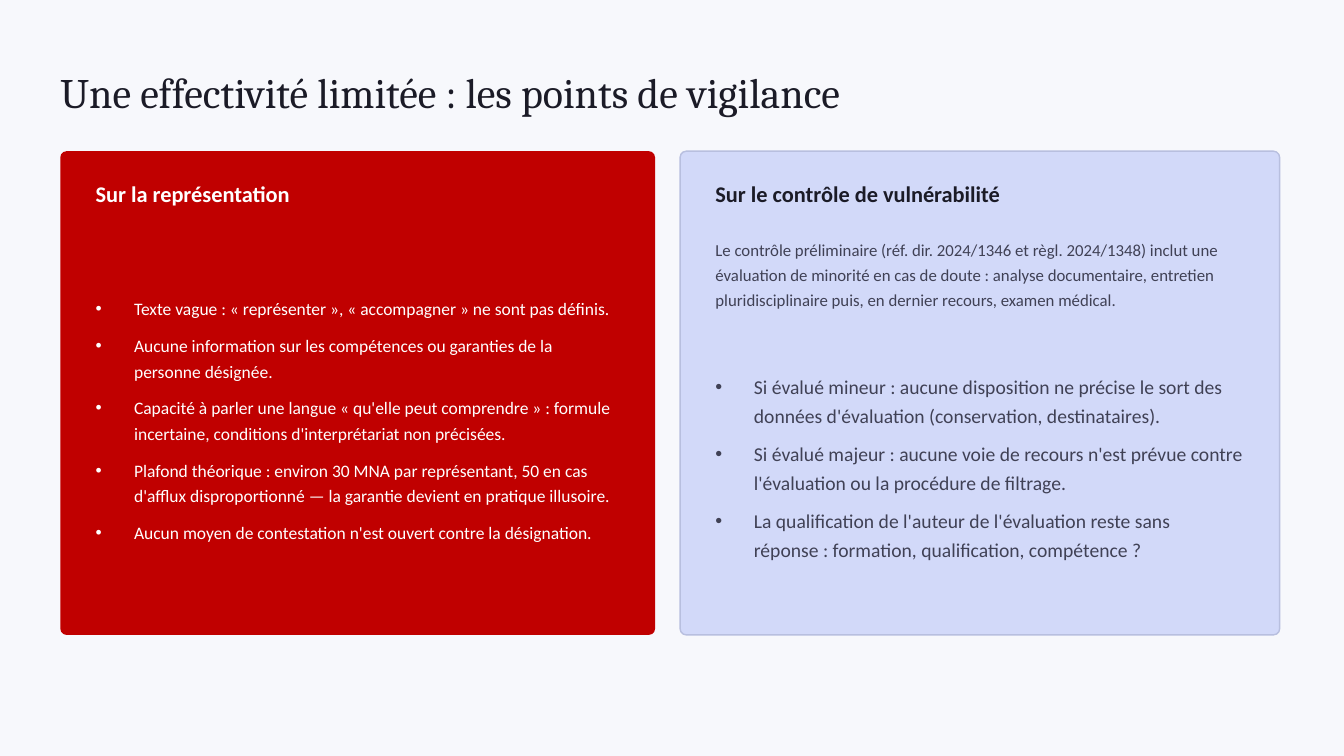
"""Build a slide comparing two cards of points requiring vigilance."""
from dataclasses import dataclass

from lxml.etree import SubElement
from pptx import Presentation
from pptx.dml.color import RGBColor
from pptx.enum.shapes import MSO_SHAPE
from pptx.enum.text import MSO_ANCHOR, PP_ALIGN
from pptx.oxml.ns import qn
from pptx.slide import Slide
from pptx.util import Cm, Pt

INK = "1B1B27"
SLATE = "404155"
WHITE = "FFFFFF"
CARD_TOP = 3.81
CARD_HEIGHT = 12.19
CARD_PADDING = 0.89
BULLET_INDENT = 0.97


@dataclass(frozen=True)
class TextStyle:
    size: float
    color: str
    font: str = "Calibri"
    bold: bool = False
    line_spacing: float = 1.0
    space_after: float = 0
    bulleted: bool = False


@dataclass(frozen=True)
class TextBlock:
    top: float
    height: float
    style: TextStyle
    paragraphs: tuple[str, ...]


@dataclass(frozen=True)
class Card:
    left: float
    width: float
    text_width: float
    fill: str
    border: str | None
    blocks: tuple[TextBlock, ...]


TITLE = TextBlock(
    1.14, 2.29, TextStyle(30, INK, font="Cambria", line_spacing=1.04),
    ("Une effectivité limitée : les points de vigilance",),
)

CARDS = (
    Card(1.52, 14.99, 13.21, "C00000", None, (
        TextBlock(4.32, 1.14, TextStyle(16, WHITE, bold=True), ("Sur la représentation",)),
        TextBlock(
            5.59, 9.91,
            TextStyle(12.5, WHITE, line_spacing=1.22, space_after=8, bulleted=True),
            (
                "Texte vague : « représenter », « accompagner » ne sont pas définis.",
                "Aucune information sur les compétences ou garanties de la personne désignée.",
                "Capacité à parler une langue « qu'elle peut comprendre » : formule incertaine, "
                "conditions d'interprétariat non précisées.",
                "Plafond théorique : environ 30 MNA par représentant, 50 en cas d'afflux "
                "disproportionné — la garantie devient en pratique illusoire.",
                "Aucun moyen de contestation n'est ouvert contre la désignation.",
            ),
        ),
    )),
    Card(17.14, 15.11, 13.46, "D2D9F9", "B8BFDF", (
        TextBlock(
            4.32, 1.14, TextStyle(16, INK, bold=True), ("Sur le contrôle de vulnérabilité",),
        ),
        TextBlock(
            5.46, 2.79, TextStyle(12, SLATE, line_spacing=1.25),
            (
                "Le contrôle préliminaire (réf. dir. 2024/1346 et règl. 2024/1348) inclut une "
                "évaluation de minorité en cas de doute : analyse documentaire, entretien "
                "pluridisciplinaire puis, en dernier recours, examen médical.",
            ),
        ),
        TextBlock(
            8.43, 6.6,
            TextStyle(14, SLATE, line_spacing=1.22, space_after=7, bulleted=True),
            (
                "Si évalué mineur : aucune disposition ne précise le sort des données "
                "d'évaluation (conservation, destinataires).",
                "Si évalué majeur : aucune voie de recours n'est prévue contre l'évaluation "
                "ou la procédure de filtrage.",
                "La qualification de l'auteur de l'évaluation reste sans réponse : formation, "
                "qualification, compétence ?",
            ),
        ),
    )),
)


def color(value: str) -> RGBColor:
    return RGBColor.from_string(value)


def add_bullet(paragraph) -> None:
    properties = paragraph._p.get_or_add_pPr()
    properties.set("marL", str(Cm(BULLET_INDENT)))
    properties.set("indent", str(-Cm(BULLET_INDENT)))
    SubElement(properties, qn("a:buFont")).set("typeface", "Arial")
    SubElement(properties, qn("a:buChar")).set("char", "•")


def add_text_block(slide: Slide, block: TextBlock, left: float, width: float) -> None:
    box = slide.shapes.add_textbox(Cm(left), Cm(block.top), Cm(width), Cm(block.height))
    frame = box.text_frame
    frame.word_wrap = True
    frame.vertical_anchor = MSO_ANCHOR.MIDDLE
    frame.margin_left = frame.margin_right = frame.margin_top = frame.margin_bottom = 0
    frame.text = "\n".join(block.paragraphs)
    style = block.style
    for paragraph in frame.paragraphs:
        if style.bulleted:
            add_bullet(paragraph)
        paragraph.alignment = PP_ALIGN.LEFT
        paragraph.line_spacing = style.line_spacing
        paragraph.space_after = Pt(style.space_after)
        for run in paragraph.runs:
            run.font.name = style.font
            run.font.size = Pt(style.size)
            run.font.bold = style.bold
            run.font.color.rgb = color(style.color)


def add_card(slide: Slide, card: Card) -> None:
    shape = slide.shapes.add_shape(
        MSO_SHAPE.ROUNDED_RECTANGLE,
        Cm(card.left), Cm(CARD_TOP), Cm(card.width), Cm(CARD_HEIGHT),
    )
    shape.adjustments[0] = 0.013
    shape.shadow.inherit = False
    shape.fill.solid()
    shape.fill.fore_color.rgb = color(card.fill)
    if card.border:
        shape.line.color.rgb = color(card.border)
        shape.line.width = Pt(1)
    else:
        shape.line.fill.background()
    for block in card.blocks:
        add_text_block(slide, block, card.left + CARD_PADDING, card.text_width)


def main() -> None:
    presentation = Presentation()
    presentation.slide_width = Cm(33.87)
    presentation.slide_height = Cm(19.05)
    slide = presentation.slides.add_slide(presentation.slide_layouts[6])
    slide.background.fill.solid()
    slide.background.fill.fore_color.rgb = color("F7F8FC")
    add_text_block(slide, TITLE, 1.52, 30.81)
    for card in CARDS:
        add_card(slide, card)
    presentation.save("out.pptx")


if __name__ == "__main__":
    main()
